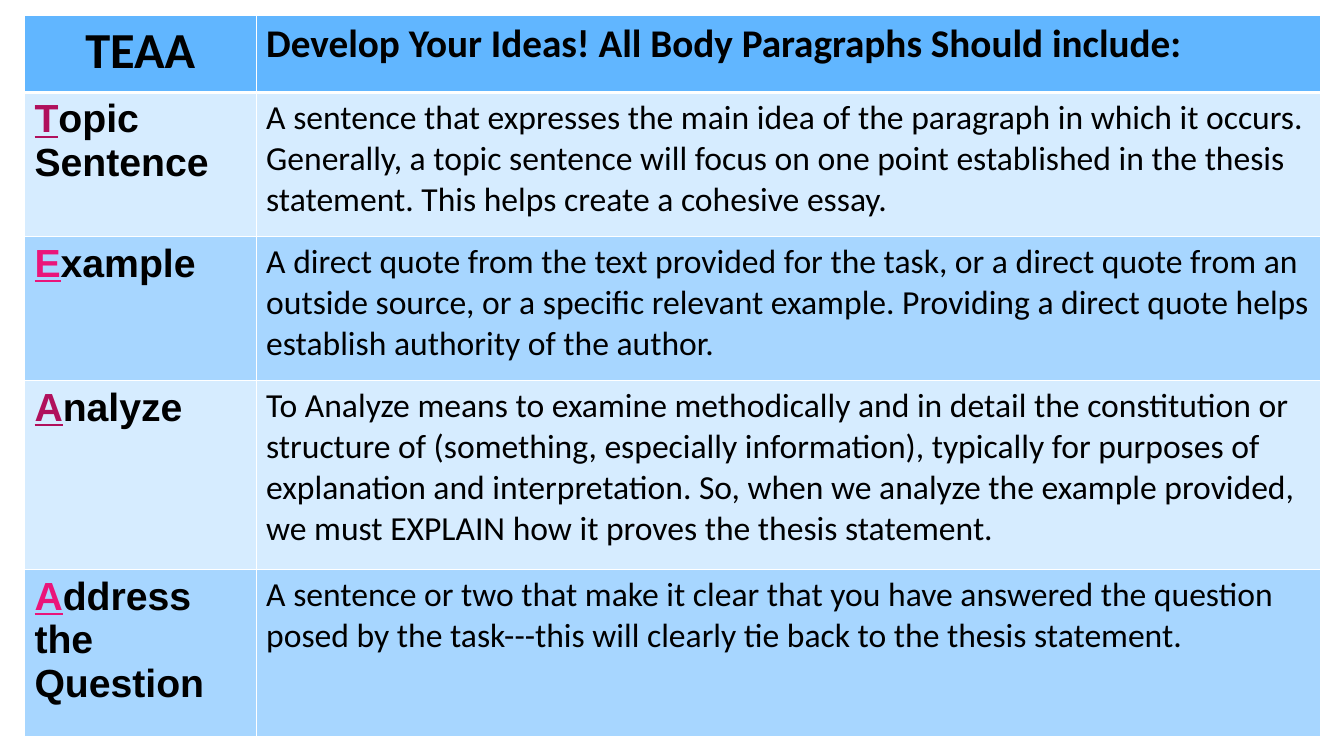
import dataclasses

import lxml.etree
import pptx
import pptx.dml.color
import pptx.enum.text
import pptx.oxml.ns
import pptx.util

Pt = pptx.util.Pt
CENTER = pptx.enum.text.PP_ALIGN.CENTER


@dataclasses.dataclass(frozen=True)
class Theme:
    heading_font: str = "Arial"
    body_font: str = "Calibri"
    acronym_size: int = 36
    heading_size: int = 28
    body_size: int = 24
    text: str = "000000"
    initials: tuple = ("B0105C", "EA157A")
    header: str = "61B6FF"
    bands: tuple = ("D6ECFF", "A7D6FF")
    border: str = "FFFFFF"
    thin: int = 1
    thick: int = 3


class SlideBuilder:
    def __init__(self, s, theme):
        self.s = s
        self.theme = theme

    def table(self, left, top, widths, heights):
        sp = self.s.shapes.add_table(
            len(heights), len(widths), Pt(left), Pt(top),
            Pt(sum(widths)), Pt(sum(heights)))
        for column, width in zip(sp.table.columns, widths):
            column.width = Pt(width)
        for row, height in zip(sp.table.rows, heights):
            row.height = Pt(height)
        return sp.table

    def border(self, cell, side, width):
        qn = pptx.oxml.ns.qn
        tcPr = cell._tc.get_or_add_tcPr()
        ln = lxml.etree.SubElement(tcPr, qn(f"a:ln{side}"), w=str(Pt(width)))
        fill = lxml.etree.SubElement(ln, qn("a:solidFill"))
        lxml.etree.SubElement(fill, qn("a:srgbClr"), val=self.theme.border)

    def cell(self, cell, fill, runs, top=None, bottom=None, align=None):
        thin = self.theme.thin
        widths = {"L": thin, "R": thin, "T": top or thin, "B": bottom or thin}
        for side, width in widths.items():
            self.border(cell, side, width)
        cell.fill.solid()
        cell.fill.fore_color.rgb = pptx.dml.color.RGBColor.from_string(fill)
        p = cell.text_frame.paragraphs[0]
        p.alignment = align
        for text, color, font in runs:
            self.run(p, text, color, font)

    def run(self, p, text, color, font):
        r = p.add_run()
        r.text = text
        for name, value in font.items():
            setattr(r.font, name, value)
        r.font.color.rgb = pptx.dml.color.RGBColor.from_string(color)


HEADER = ("TEAA", "Develop Your Ideas! All Body Paragraphs Should include:")
STEPS = [
    ("Topic Sentence",
     "A sentence that expresses the main idea of the paragraph in which it "
     "occurs. Generally, a topic sentence will focus on one point established "
     "in the thesis statement. This helps create a cohesive essay."),
    ("Example",
     "A direct quote from the text provided for the task, or a direct quote "
     "from an outside source, or a specific relevant example. Providing a "
     "direct quote helps establish authority of the author."),
    ("Analyze",
     "To Analyze means to examine methodically and in detail the constitution "
     "or structure of (something, especially information), typically for "
     "purposes of explanation and interpretation. So, when we analyze the "
     "example provided, we must EXPLAIN how it proves the thesis statement."),
    ("Address the Question",
     "A sentence or two that make it clear that you have answered the "
     "question posed by the task---this will clearly tie back to the thesis "
     "statement."),
]


def main():
    prs = pptx.Presentation()
    prs.slide_width, prs.slide_height = Pt(960), Pt(540)
    theme = Theme()
    builder = SlideBuilder(prs.slides.add_slide(prs.slide_layouts[6]), theme)
    table = builder.table(17.5, 11, (165.5, 760), (55, 103, 103, 135, 119))

    body = {"name": theme.body_font, "size": Pt(theme.body_size), "bold": False}
    title = {**body, "size": Pt(theme.heading_size), "bold": True}
    acronym = {**title, "size": Pt(theme.acronym_size)}
    heading = {**title, "name": theme.heading_font, "underline": False}
    initial = {**heading, "underline": True}

    header_styles = ((acronym, CENTER), (title, None))
    for column, (text, (font, align)) in enumerate(zip(HEADER, header_styles)):
        builder.cell(table.cell(0, column), theme.header,
                     [(text, theme.text, font)],
                     bottom=theme.thick, align=align)

    for row, (name, description) in enumerate(STEPS, 1):
        band = (row - 1) % len(theme.bands)
        contents = (
            [(name[0], theme.initials[band], initial),
             (name[1:], theme.text, heading)],
            [(description, theme.text, body)],
        )
        for column, runs in enumerate(contents):
            builder.cell(table.cell(row, column), theme.bands[band], runs,
                         top=theme.thick if row == 1 else None)

    prs.save("out.pptx")


if __name__ == "__main__":
    main()
